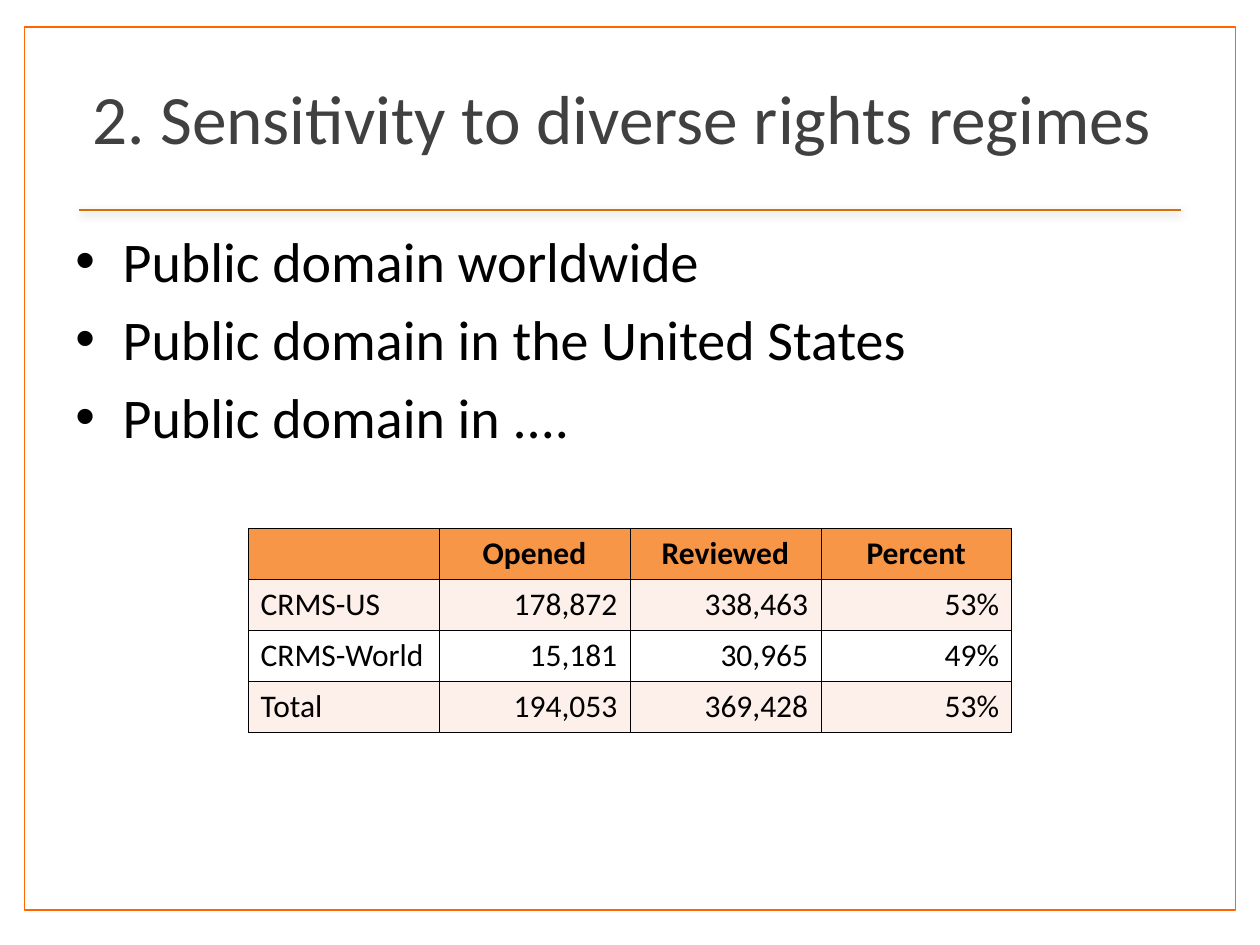
from lxml.etree import SubElement
from pptx import Presentation
from pptx.dml.color import RGBColor
from pptx.enum.shapes import MSO_CONNECTOR, MSO_SHAPE
from pptx.enum.text import MSO_ANCHOR, PP_ALIGN
from pptx.oxml import parse_xml
from pptx.oxml.ns import nsdecls, qn
from pptx.util import Pt

BLACK = RGBColor(0x00, 0x00, 0x00)
WHITE = RGBColor(0xFF, 0xFF, 0xFF)
GREY = RGBColor(0x40, 0x40, 0x40)
FRAME_ORANGE = RGBColor(0xFF, 0x66, 0x00)
RULE_ORANGE = RGBColor(0xD5, 0x70, 0x07)
HEADER_ORANGE = RGBColor(0xF7, 0x96, 0x46)
BAND_PEACH = RGBColor(0xFD, 0xEF, 0xE9)


def add_text(paragraph, text, **font_format):
    run = paragraph.add_run()
    run.text = text
    for name, value in {"name": "Calibri", **font_format}.items():
        if name == "color":
            run.font.color.rgb = value
        else:
            setattr(run.font, name, value)


def add_text_frame(slide, left, top, width, height, anchor):
    text_frame = slide.shapes.add_textbox(Pt(left), Pt(top), Pt(width), Pt(height)).text_frame
    text_frame.word_wrap = True
    text_frame.vertical_anchor = anchor
    return text_frame


presentation = Presentation()
presentation.slide_width, presentation.slide_height = Pt(720), Pt(540)
slide = presentation.slides.add_slide(presentation.slide_layouts[6])

# Frame around the slide
frame = slide.shapes.add_shape(MSO_SHAPE.RECTANGLE, Pt(14), Pt(15.5), Pt(692), Pt(504.5))
frame.shadow.inherit = False
frame.fill.solid()
frame.fill.fore_color.rgb = WHITE
frame.line.color.rgb = FRAME_ORANGE
frame.line.width = Pt(1)

# Rule under the title, with a soft shadow
rule = slide.shapes.add_connector(MSO_CONNECTOR.STRAIGHT, Pt(45), Pt(120), Pt(675), Pt(120))
rule.line.color.rgb = RULE_ORANGE
rule.line.width = Pt(1)
rule.element.spPr.append(parse_xml(
    f'<a:effectLst {nsdecls("a")}>'
    f'<a:outerShdw blurRad="{Pt(5)}" dist="{Pt(1.8)}" dir="5400000" rotWithShape="0">'
    '<a:srgbClr val="000000"><a:alpha val="35000"/></a:srgbClr>'
    '</a:outerShdw></a:effectLst>'))

# Title
title = add_text_frame(slide, 36, 21.6, 648, 90, MSO_ANCHOR.MIDDLE).paragraphs[0]
title.alignment = PP_ALIGN.CENTER
add_text(title, "2. Sensitivity to diverse rights regimes ", size=Pt(39.6), color=GREY)

# Bullet list
body = add_text_frame(slide, 36, 126, 648, 385, MSO_ANCHOR.TOP)
bullets = ["Public domain worldwide", "Public domain in the United States", "Public domain in ...."]
for index, text in enumerate(bullets):
    paragraph = body.add_paragraph() if index else body.paragraphs[0]
    properties = paragraph._p.get_or_add_pPr()
    properties.set("marL", str(Pt(27)))
    properties.set("indent", str(Pt(-27)))
    SubElement(properties, qn("a:buFont"), typeface="Arial")
    SubElement(properties, qn("a:buChar"), char="•")
    paragraph.space_before = Pt(6 if index else 0)
    add_text(paragraph, text, size=Pt(32), color=BLACK)

# Review table
rows = [
    ["", "Opened", "Reviewed", "Percent"],
    ["CRMS-US", "178,872", "338,463", "53%"],
    ["CRMS-World", "15,181", "30,965", "49%"],
    ["Total", "194,053", "369,428", "53%"],
]
row_fills = [HEADER_ORANGE, BAND_PEACH, WHITE, BAND_PEACH]
column_width, row_height = 109.1, 29.16
table = slide.shapes.add_table(
    len(rows), len(rows[0]), Pt(141.8), Pt(301.8),
    Pt(column_width * len(rows[0])), Pt(row_height * len(rows))).table
for column in table.columns:
    column.width = Pt(column_width)

for row_index, (values, fill) in enumerate(zip(rows, row_fills)):
    table.rows[row_index].height = Pt(row_height)
    is_header = row_index == 0
    for column_index, value in enumerate(values):
        cell = table.cell(row_index, column_index)
        paragraph = cell.text_frame.paragraphs[0]
        if is_header:
            paragraph.alignment = PP_ALIGN.CENTER
        else:
            paragraph.alignment = PP_ALIGN.RIGHT if column_index else PP_ALIGN.LEFT
        if value:
            add_text(paragraph, value, size=Pt(18), bold=is_header, color=BLACK)
        # Borders come before the fill in the cell properties
        cell_properties = cell._tc.get_or_add_tcPr()
        for side in ("lnL", "lnR", "lnT", "lnB"):
            border = SubElement(cell_properties, qn(f"a:{side}"), w=str(Pt(0.25)))
            SubElement(SubElement(border, qn("a:solidFill")), qn("a:srgbClr"), val=str(BLACK))
        cell.fill.solid()
        cell.fill.fore_color.rgb = fill

presentation.save("out.pptx")
